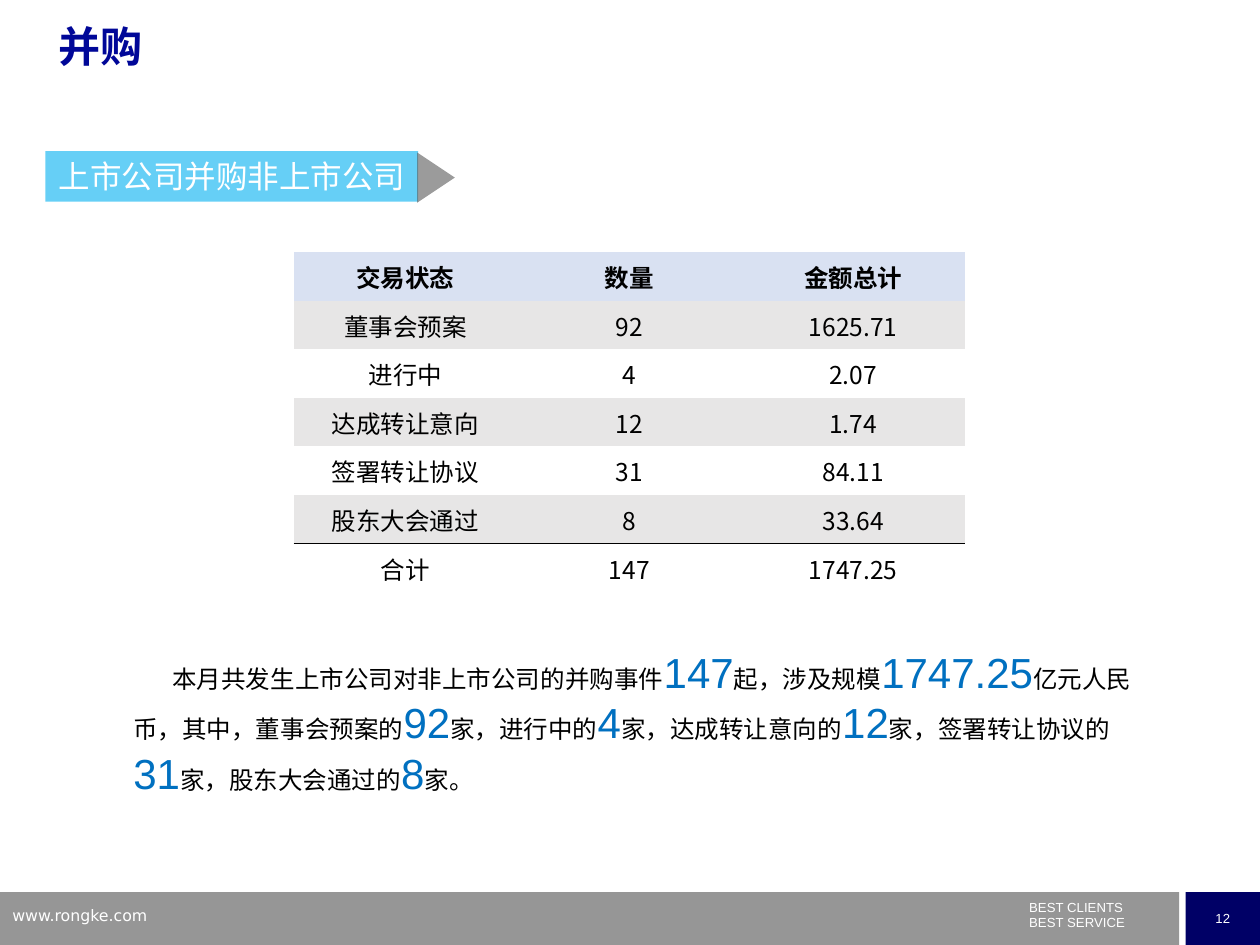
"""Build the monthly mergers and acquisitions summary slide."""
from lxml.etree import SubElement
from pptx import Presentation
from pptx.dml.color import RGBColor
from pptx.enum.shapes import MSO_SHAPE as Shape
from pptx.enum.text import MSO_ANCHOR as Anchor, PP_ALIGN as Align
from pptx.oxml import parse_xml
from pptx.oxml.ns import nsdecls, qn
from pptx.util import Inches, Pt

WHITE = RGBColor(0xFF, 0xFF, 0xFF)
BLACK = RGBColor(0, 0, 0)
GRAY = RGBColor(0x96, 0x96, 0x96)
NAVY = RGBColor(0, 0, 0x66)
TITLE_BLUE = RGBColor(0, 0x07, 0x98)
NUMBER_BLUE = RGBColor(0, 0x70, 0xC0)
BANNER_BLUE = RGBColor(0, 0xB0, 0xF0)
ARROW_GRAY = RGBColor(0x59, 0x59, 0x59)
HEADER_FILL = RGBColor(0xD9, 0xE1, 0xF2)
BAND_FILL = RGBColor(0xE7, 0xE6, 0xE6)

LATIN = "Arial"
CHINESE = "Noto Sans CJK SC"
WEB = "DejaVu Sans"
NO_TABLE_STYLE = "{2D5ABB26-0587-4C30-8999-92F81FD0307C}"

TITLE = "并购"
BANNER = "上市公司并购非上市公司"
DEALS = [
    ("交易状态", "数量", "金额总计"),
    ("董事会预案", "92", "1625.71"),
    ("进行中", "4", "2.07"),
    ("达成转让意向", "12", "1.74"),
    ("签署转让协议", "31", "84.11"),
    ("股东大会通过", "8", "33.64"),
    ("合计", "147", "1747.25"),
]
SUMMARY = [
    ("本月共发生上市公司对非上市公司的并购事件", "147"),
    ("起，涉及规模", "1747.25"),
    ("亿元人民币，其中，董事会预案的", "92"),
    ("家，进行中的", "4"),
    ("家，达成转让意向的", "12"),
    ("家，签署转让协议的", "31"),
    ("家，股东大会通过的", "8"),
    ("家。", ""),
]
WEBSITE = "www.rongke.com"
SLOGAN = ["BEST CLIENTS", "BEST SERVICE"]
PAGE = "12"


def style_run(run, size, color, name, bold=False):
    font = run.font
    font.size, font.name, font.bold = Pt(size), name, bold
    font.color.rgb = color
    SubElement(run._r.get_or_add_rPr(), qn("a:ea")).set("typeface", CHINESE)


def style_text(frame, size, color, name, bold=False, align=Align.LEFT):
    for paragraph in frame.paragraphs:
        paragraph.alignment = align
        for run in paragraph.runs:
            style_run(run, size, color, name, bold)


def add_box(slide, kind, place, fill, alpha=100):
    shape = slide.shapes.add_shape(kind, *map(Inches, place))
    shape.shadow.inherit = False
    shape.fill.solid()
    shape.fill.fore_color.rgb = fill
    shape.line.fill.background()
    if alpha < 100:
        color = shape.fill._xPr.find(".//" + qn("a:srgbClr"))
        SubElement(color, qn("a:alpha")).set("val", str(alpha * 1000))
    return shape


def add_text(slide, place, text=""):
    frame = slide.shapes.add_textbox(*map(Inches, place)).text_frame
    frame.word_wrap = True
    frame.text = text
    return frame


def add_label(shape, text, size, name):
    frame = shape.text_frame
    frame.word_wrap = False
    frame.vertical_anchor = Anchor.MIDDLE
    frame.text = text
    style_text(frame, size, WHITE, name, align=Align.CENTER)


def add_border(cell, side):
    cell._tc.get_or_add_tcPr().insert(0, parse_xml(
        f'<a:{side} {nsdecls("a")} w="12700"><a:solidFill>'
        f'<a:srgbClr val="{BLACK}"/></a:solidFill></a:{side}>'))


def add_footer(slide):
    add_box(slide, Shape.RECTANGLE, (0, 7.08, 9.36, 0.42), GRAY)
    page_box = add_box(slide, Shape.RECTANGLE, (9.41, 7.08, 0.59, 0.42), NAVY)
    add_label(page_box, PAGE, 7.5, LATIN)
    slogan = add_text(slide, (8.07, 7.14, 1.5, 0.29), "\n".join(SLOGAN))
    style_text(slogan, 7.5, WHITE, LATIN)
    for paragraph in slogan.paragraphs:
        paragraph.line_spacing = 0.5
    slogan.paragraphs[1].space_before = Pt(4.3)
    website = add_text(slide, (0, 7.14, 2.4, 0.26), WEBSITE)
    style_text(website, 9, WHITE, WEB)


def add_heading(slide):
    title = add_text(slide, (0.37, 0.16, 9, 0.7), TITLE)
    style_text(title, 24, TITLE_BLUE, LATIN, bold=True)
    title.paragraphs[0].line_spacing = 0.9
    banner = add_box(slide, Shape.RECTANGLE, (0.36, 1.2, 2.96, 0.4), BANNER_BLUE, 60)
    add_label(banner, BANNER, 18, CHINESE)
    arrow = add_box(slide, Shape.ISOSCELES_TRIANGLE, (3.26, 1.26, 0.4, 0.3), ARROW_GRAY, 60)
    arrow.rotation = 90


def add_deals(slide):
    place = map(Inches, (2.33, 2, 5.33, 2.7))
    table = slide.shapes.add_table(len(DEALS), len(DEALS[0]), *place).table
    table._tbl.tblPr.find(qn("a:tableStyleId")).text = NO_TABLE_STYLE
    total = len(DEALS) - 1
    for row, values in enumerate(DEALS):
        fill = HEADER_FILL if row == 0 else BAND_FILL if row % 2 else WHITE
        for column, value in enumerate(values):
            cell = table.cell(row, column)
            cell.text = value
            cell.vertical_anchor = Anchor.MIDDLE
            cell.margin_left = cell.margin_right = cell.margin_top = Inches(0.01)
            cell.margin_bottom = 0
            style_text(cell.text_frame, 14, BLACK, CHINESE, row == 0, Align.CENTER)
            cell.fill.solid()
            cell.fill.fore_color.rgb = fill
            if row == total - 1:
                add_border(cell, "lnB")
            elif row == total:
                add_border(cell, "lnT")


def add_summary(slide):
    paragraph = add_text(slide, (0.96, 5.08, 8.24, 1.31)).paragraphs[0]
    paragraph._p.get_or_add_pPr().set("indent", str(Inches(0.31)))
    for words, number in SUMMARY:
        for text, size, color, name in (
            (words, 14, BLACK, CHINESE),
            (number, 24, NUMBER_BLUE, LATIN),
        ):
            if text:
                run = paragraph.add_run()
                run.text = text
                style_run(run, size, color, name)


def main():
    presentation = Presentation()
    presentation.slide_width, presentation.slide_height = Inches(10), Inches(7.5)
    slide = presentation.slides.add_slide(presentation.slide_layouts[6])
    add_footer(slide)
    add_heading(slide)
    add_summary(slide)
    add_deals(slide)
    presentation.save("out.pptx")


if __name__ == "__main__":
    main()
